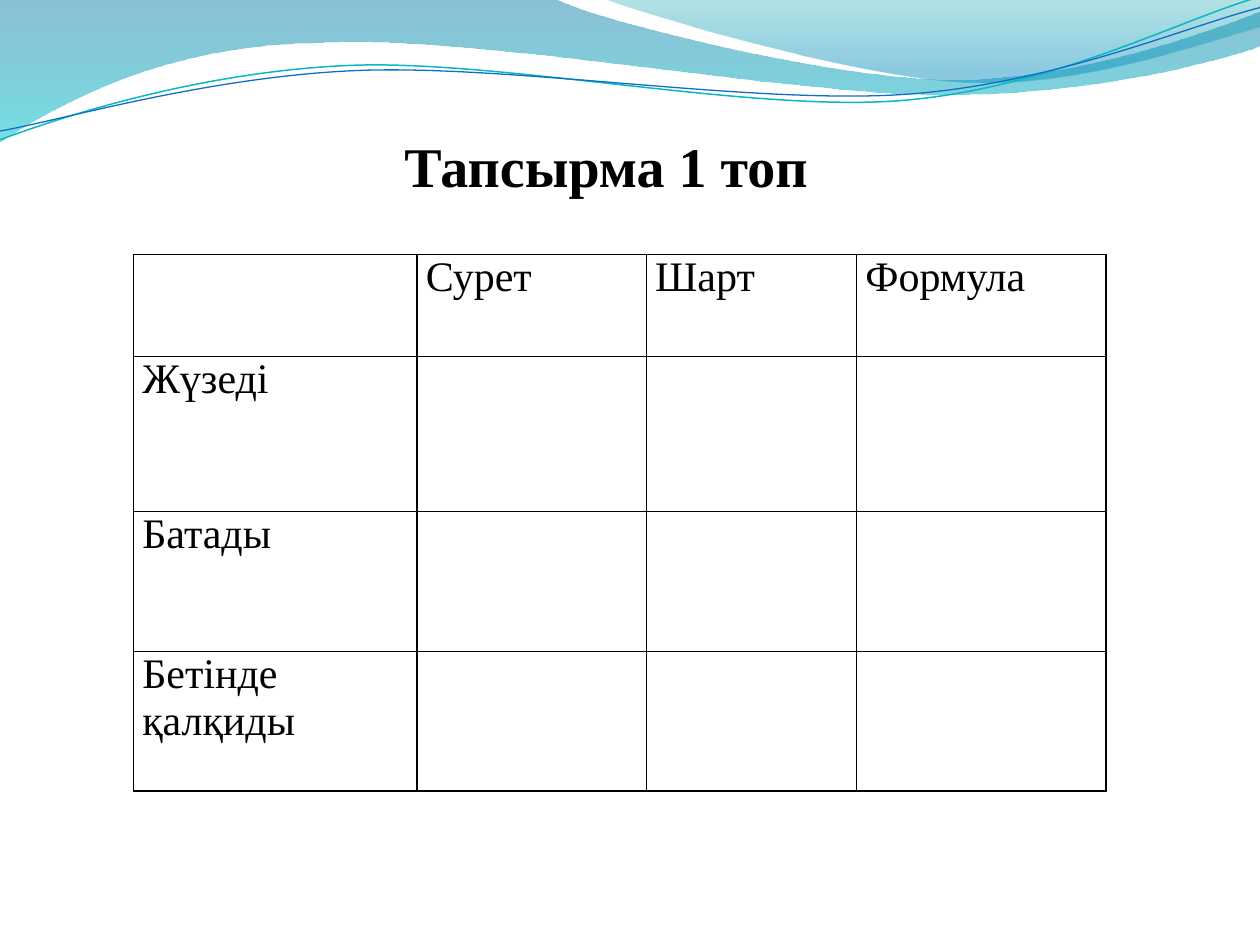
import math

from lxml import etree
from pptx import Presentation
from pptx.dml import color
from pptx.enum import text
from pptx.oxml import ns, parse_xml
from pptx.util import Inches, Pt

FONT = "Times New Roman"
TILT = 2.7


def rgb(shade):
    return color.RGBColor.from_string(shade)


def draw_path(page, bounds, start, segments, closed, tilt=0):
    """Draw a freeform: pairs are straight ends, sextuples are Bezier curves."""
    left, top, width, height = bounds
    middle_x, middle_y = left + width / 2, top + height / 2
    cosine, sine = math.cos(math.radians(tilt)), math.sin(math.radians(tilt))
    builder = page.shapes.build_freeform(Inches(start[0]), Inches(start[1]), scale=1.0)
    builder.add_line_segments(
        [(Inches(segment[-2]), Inches(segment[-1])) for segment in segments], close=closed)
    shape = builder.convert_to_shape()
    shape.shadow.inherit = False
    shape.left, shape.top, shape.width, shape.height = map(Inches, bounds)
    shape.rotation = -tilt

    # Turn the straight segments into curves, in the untilted frame
    outline = next(shape._element.iter(ns.qn("a:path")))
    outline.set("w", str(Inches(width)))
    outline.set("h", str(Inches(height)))
    for command, numbers in zip(list(outline), [start, *segments]):
        if len(numbers) == 6:
            command.tag = ns.qn("a:cubicBezTo")
        for point in list(command):
            command.remove(point)
        for x, y in zip(numbers[::2], numbers[1::2]):
            dx, dy = x - middle_x, y - middle_y
            across = width / 2 + dx * cosine - dy * sine
            down = height / 2 + dx * sine + dy * cosine
            etree.SubElement(command, ns.qn("a:pt"),
                             x=str(Inches(across)), y=str(Inches(down)))
    return shape


deck = Presentation()
deck.slide_width, deck.slide_height = Inches(10), Inches(7.5)
page = deck.slides.add_slide(deck.slide_layouts[5])

# Translucent waves: bounds, start, segments, gradient stops (position, colour, opacity)
waves = [
    ((-0.01, -0.01, 10.02, 1.14), (0, -0.01),
     [(4.4, -0.01), (4.76, 0.17, 6.64, 0.63, 7.58, 0.63),
      (8.53, 0.63, 9.58, 0.26, 10, 0.09), (10.01, 0.36),
      (9.83, 0.44, 8.7, 0.76, 7.46, 0.75), (6.22, 0.75, 3.82, 0.28, 2.57, 0.34),
      (1.29, 0.35, 0.46, 0.83, -0.01, 1.13), (0, -0.01)],
     [(0, "0074A1", 45), (100, "00C6CF", 55)]),
    ((4.79, -0.01, 5.21, 0.7), (4.79, -0.01),
     [(5.09, 0.11, 6.82, 0.62, 7.69, 0.65), (8.56, 0.69, 9.61, 0.32, 10, 0.21),
      (10, 0), (4.79, -0.01)],
     [(0, "00A1A9", 30), (80, "008BBF", 45)]),
]
for bounds, start, segments, stops in waves:
    wave = draw_path(page, bounds, start, segments, True)
    wave.line.fill.background()
    wave.fill.gradient()
    gradient = next(wave._element.iter(ns.qn("a:gradFill")))
    for child in list(gradient):
        gradient.remove(child)
    stop_list = etree.SubElement(gradient, ns.qn("a:gsLst"))
    for position, shade, opacity in stops:
        stop = etree.SubElement(stop_list, ns.qn("a:gs"), pos=str(position * 1000))
        tint = etree.SubElement(stop, ns.qn("a:srgbClr"), val=shade)
        etree.SubElement(tint, ns.qn("a:alpha"), val=str(opacity * 1000))
    etree.SubElement(gradient, ns.qn("a:lin"), ang="5400000", scaled="0")

# Thin tilted lines following the waves
strands = [
    ((-0.02, 0.22, 10.02, 0.71), (0, 1.11),
     [(0.48, 0.93, 1.58, 0.57, 2.77, 0.52), (3.95, 0.47, 5.93, 0.89, 7.13, 0.8),
      (8.33, 0.71, 9.38, 0.15, 9.98, -0.02)], "0AB8BF", 0.85),
    ((-0.02, 0.3, 10.03, 0.58), (0, 1.04),
     [(0.47, 0.96, 1.64, 0.61, 2.83, 0.56), (4.03, 0.51, 5.97, 0.83, 7.17, 0.75),
      (8.36, 0.67, 9.41, 0.21, 10, 0.06)], "0F6FC6", 0.75),
]
for bounds, start, segments, shade, width in strands:
    strand = draw_path(page, bounds, start, segments, False, TILT)
    strand.fill.background()
    strand.line.color.rgb = rgb(shade)
    strand.line.width = Pt(width)

# Table
rows = [
    ["", "Сурет", "Шарт", "Формула"],
    ["Жүзеді", "", "", ""],
    ["Батады", "", "", ""],
    ["Бетінде қалқиды", "", "", ""],
]
frame = page.shapes.add_table(4, 4, Inches(1.06), Inches(2.02), Inches(7.72), Inches(4.25))
table = frame.table
table.first_row = table.horz_banding = False
for column, width in zip(table.columns, (2.25, 1.82, 1.67, 1.98)):
    column.width = Inches(width)
for row, height in zip(table.rows, (0.81, 1.23, 1.11, 1.11)):
    row.height = Inches(height)
for row, words in zip(table.rows, rows):
    for cell, word in zip(row.cells, words):
        cell.margin_left = cell.margin_right = Inches(0.07)
        cell.margin_top = cell.margin_bottom = 0
        cell.fill.background()
        cell.text_frame.text = word
        for span in cell.text_frame.paragraphs[0].runs:
            span.font.name, span.font.size = FONT, Pt(24)
            span.font.color.rgb = rgb("000000")
        for index, side in enumerate("LRTB"):
            border = parse_xml(
                f'<a:ln{side} {ns.nsdecls("a")} w="12700"><a:solidFill>'
                f'<a:srgbClr val="000000"/></a:solidFill></a:ln{side}>')
            cell._tc.get_or_add_tcPr().insert(index, border)

# Title
title = page.shapes.title
title.left, title.top = Inches(3.11), Inches(0.99)
title.width, title.height = Inches(3.44), Inches(0.94)
box = title.text_frame
box.text = "Тапсырма 1 топ"
box.word_wrap = False
box.auto_size = text.MSO_AUTO_SIZE.NONE
box.vertical_anchor = text.MSO_ANCHOR.TOP
box.margin_top = Inches(0.05)
para = box.paragraphs[0]
para.alignment = text.PP_ALIGN.LEFT
span = para.runs[0]
span.font.name, span.font.size, span.font.bold = FONT, Pt(32), True
span.font.color.rgb = rgb("000000")

deck.save("out.pptx")
